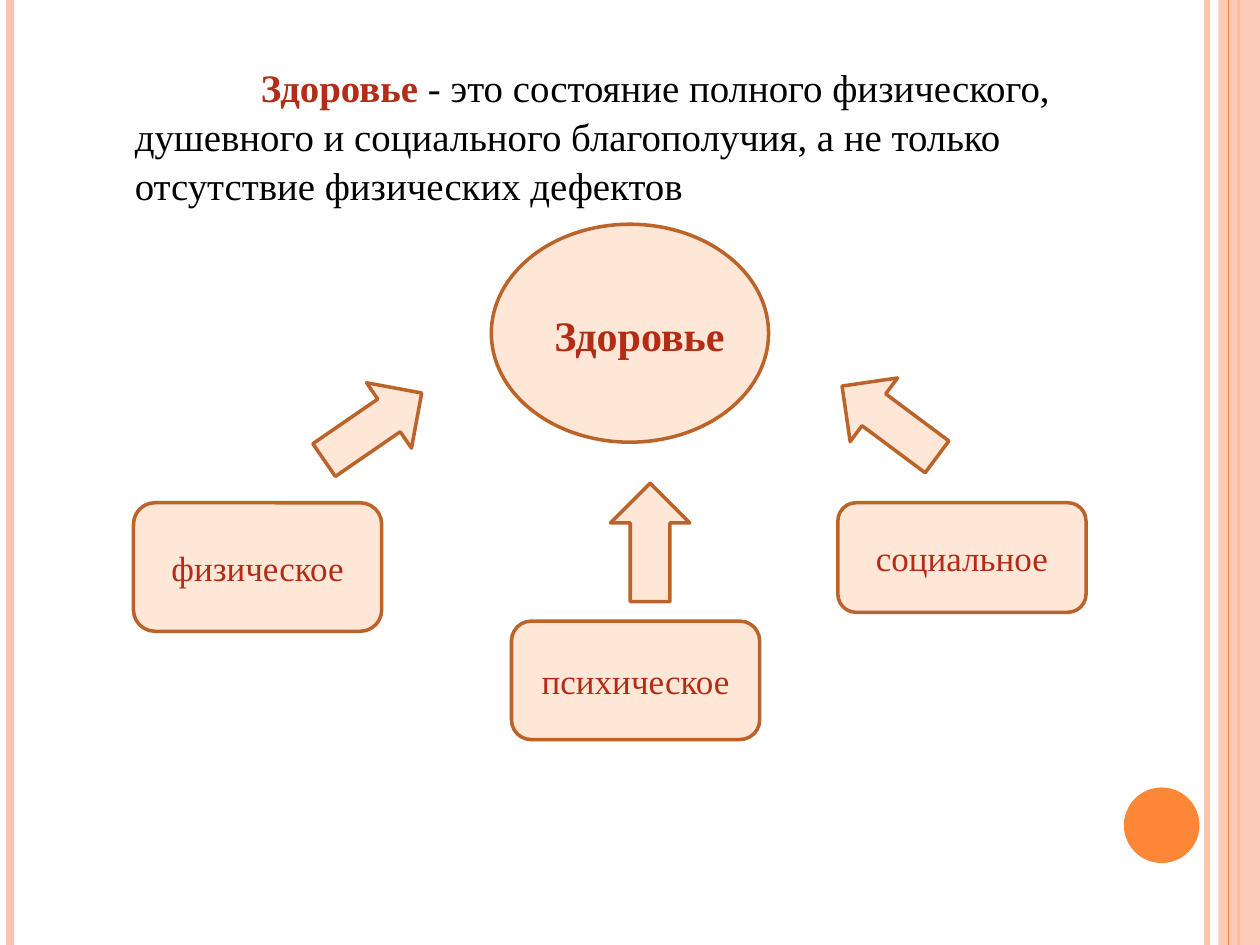
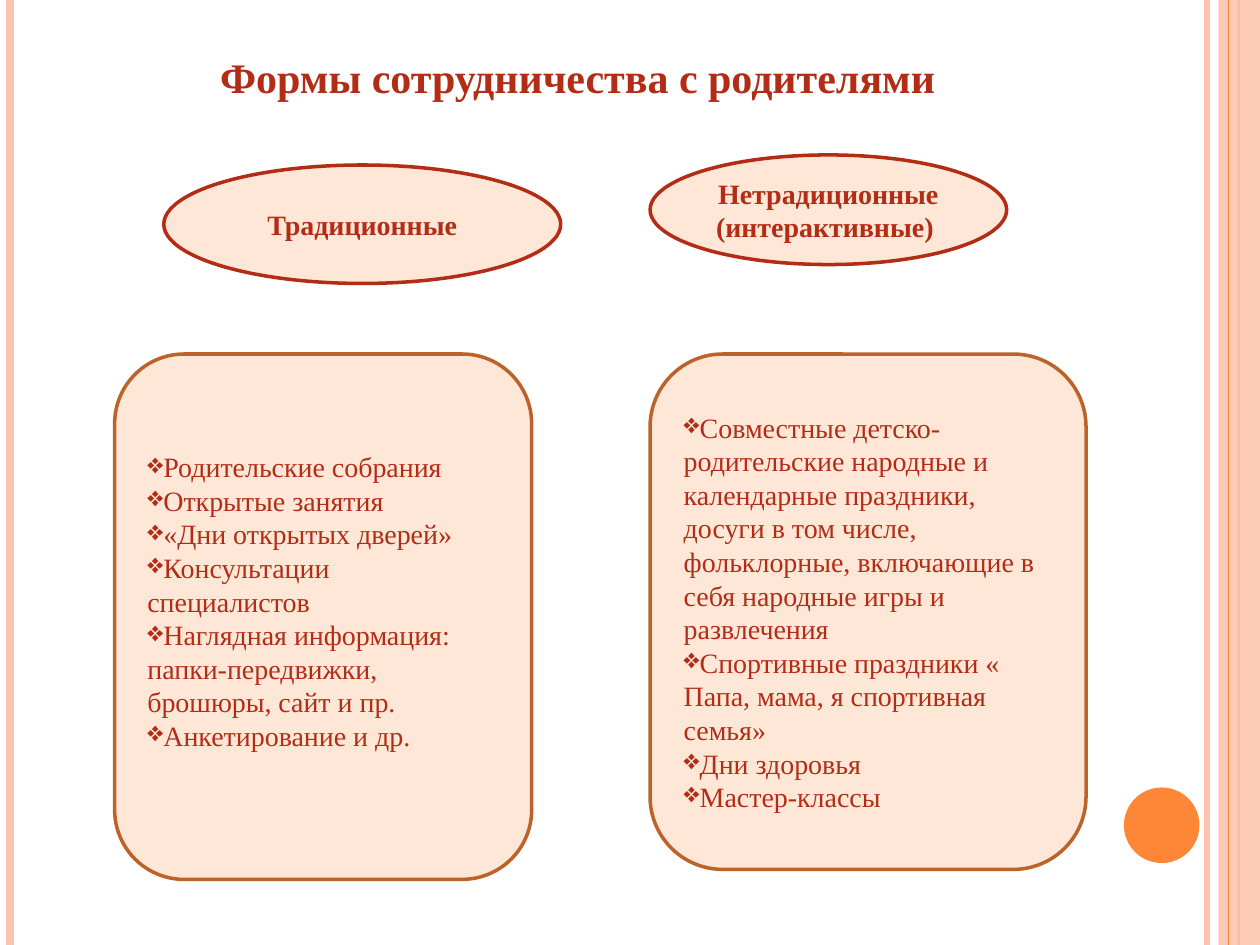
from lxml import etree
from pptx import Presentation
from pptx import util as u
from pptx.dml.color import RGBColor
from pptx.enum import shapes, text
from pptx.oxml.ns import qn

COLORS = {
    "background": "FFFFFF",
    "band": "FEC3AE",
    "accent": "FE8637",
    "fill": "FFE7D7",
    "outline": "BC6329",
    "red": "B32C16",
    "black": "000000",
}
FONT = "Times New Roman"
SHAPE = shapes.MSO_SHAPE


def add_figure(page, kind, at, fill="fill", outline="outline"):
    figure = page.shapes.add_shape(kind, *[u.Inches(length) for length in at])
    figure.shadow.inherit = False
    figure.fill.solid()
    figure.fill.fore_color.rgb = RGBColor.from_string(COLORS[fill])
    if outline:
        figure.line.color.rgb = RGBColor.from_string(COLORS[outline])
        figure.line.width = u.Pt(2)
    else:
        figure.line.fill.background()
    figure.text_frame.word_wrap = True
    figure.text_frame.vertical_anchor = text.MSO_ANCHOR.MIDDLE
    return figure


def add_span(para, words, size, bold=False, color="red", align=text.PP_ALIGN.CENTER):
    para.alignment = align
    span = para.add_run()
    span.text = words
    span.font.name = FONT
    span.font.size = u.Pt(size)
    span.font.bold = bold
    span.font.color.rgb = RGBColor.from_string(COLORS[color])


deck = Presentation()
deck.slide_width, deck.slide_height = u.Inches(10), u.Inches(7.5)
master_fill = deck.slide_master.background.fill
master_fill.solid()
master_fill.fore_color.rgb = RGBColor.from_string(COLORS["background"])

# Shared frame: side lines, right band, corner circle, title position
title_places = [(0.67, 0.44, 8.16, 1.18), (0.5, 0.36, 8.17, 0.71)]
side_lines = [  # x, colour, width
    (9.58, "band", 3),
    (0.08, "band", 4.5),
    (9.83, "accent", 1.5),
    (9.75, "accent", 0.75),
]
pages = []
for place in title_places:
    page = deck.slides.add_slide(deck.slide_layouts[5])
    pages.append(page)
    title = page.shapes.title
    title.left, title.top, title.width, title.height = [u.Inches(n) for n in place]
    title.text_frame.word_wrap = True
    title.text_frame.auto_size = text.MSO_AUTO_SIZE.NONE
    title.text_frame.vertical_anchor = text.MSO_ANCHOR.TOP

    for x, color, width in side_lines:
        if x == 9.75:
            band = add_figure(page, SHAPE.RECTANGLE, (9.67, 0, 0.33, 7.5), "band", None)
            band_color = band.fill._xPr.find(".//" + qn("a:srgbClr"))
            etree.SubElement(band_color, qn("a:alpha"), val="87000")
        line = page.shapes.add_connector(
            shapes.MSO_CONNECTOR.STRAIGHT, u.Inches(x), 0, u.Inches(x), deck.slide_height)
        line.line.color.rgb = RGBColor.from_string(COLORS[color])
        line.line.width = u.Pt(width)
        etree.SubElement(line._element.spPr, qn("a:effectLst"))
    add_figure(page, SHAPE.OVAL, (8.92, 6.25, 0.6, 0.6), "accent", None)

health_page, forms_page = pages

# Slide 1: what health is made of
para = health_page.shapes.title.text_frame.paragraphs[0]
para.line_spacing = 1.05
indents = para._p.get_or_add_pPr()
indents.set("marL", str(u.Inches(0.3)))
indents.set("indent", str(u.Inches(1)))
add_span(para, "Здоровье", 22.2, True, align=text.PP_ALIGN.LEFT)
add_span(para, " - это состояние полного физического, душевного и социального благополучия, "
         "а не только отсутствие физических дефектов", 22.2, color="black",
         align=text.PP_ALIGN.LEFT)

add_figure(health_page, SHAPE.OVAL, (3.9, 1.78, 2.2, 1.73))
health_label = health_page.shapes.add_textbox(
    u.Inches(4.29), u.Inches(2.41), u.Inches(1.57), u.Inches(0.5))
add_span(health_label.text_frame.paragraphs[0], "Здоровье", 24, True)

aspects = [  # name, left, top, height, arrow left, arrow top, arrow angle
    ("физическое", 1.06, 3.99, 1.02, 2.49, 3.07, 325.5),
    ("психическое", 4.06, 4.93, 0.94, 4.69, 3.99, 270),
    ("социальное", 6.65, 3.99, 0.87, 6.59, 3.03, 216.7),
]
for name, left, top, height, arrow_left, arrow_top, angle in aspects:
    box = add_figure(health_page, SHAPE.ROUNDED_RECTANGLE, (left, top, 1.97, height))
    add_span(box.text_frame.paragraphs[0], name, 20)
    arrow = add_figure(health_page, SHAPE.RIGHT_ARROW, (arrow_left, arrow_top, 0.94, 0.63))
    arrow.rotation = angle

# Slide 2: two groups of forms of cooperation
para = forms_page.shapes.title.text_frame.paragraphs[0]
para.space_before = u.Pt(3)
add_span(para, "Формы сотрудничества с родителями", 24, True)

groups = [  # heading lines, heading place, list place, bottom inset, items
    (["Традиционные"], (1.3, 1.31, 3.15, 0.94), (0.91, 2.81, 3.31, 4.17), 0.3, [
        "Родительские собрания",
        "Открытые занятия",
        "«Дни открытых дверей»",
        "Консультации специалистов",
        "Наглядная информация: папки-передвижки, брошюры, сайт и пр.",
        "Анкетирование и др.",
    ]),
    (["Нетрадиционные", "(интерактивные) "], (5.16, 1.23, 2.83, 0.87),
     (5.16, 2.81, 3.46, 4.09), 0.05, [
        "Совместные детско- родительские народные и календарные праздники, досуги "
        "в том числе, фольклорные, включающие в себя народные игры и развлечения",
        "Спортивные праздники « Папа, мама, я спортивная семья»",
        "Дни здоровья",
        "Мастер-классы",
    ]),
]
for heading, heading_place, list_place, inset, items in groups:
    oval = add_figure(forms_page, SHAPE.OVAL, heading_place, outline="red")
    for number, words in enumerate(heading):
        frame = oval.text_frame
        para = frame.add_paragraph() if number else frame.paragraphs[0]
        add_span(para, words, 16, True)

    box = add_figure(forms_page, SHAPE.ROUNDED_RECTANGLE, list_place)
    frame = box.text_frame
    frame.margin_bottom = u.Inches(inset)
    for number, words in enumerate(items):
        para = frame.add_paragraph() if number else frame.paragraphs[0]
        add_span(para, words, 16, align=text.PP_ALIGN.LEFT)
        etree.SubElement(para._p.get_or_add_pPr(), qn("a:buChar"), char="❖")

deck.save("out.pptx")
